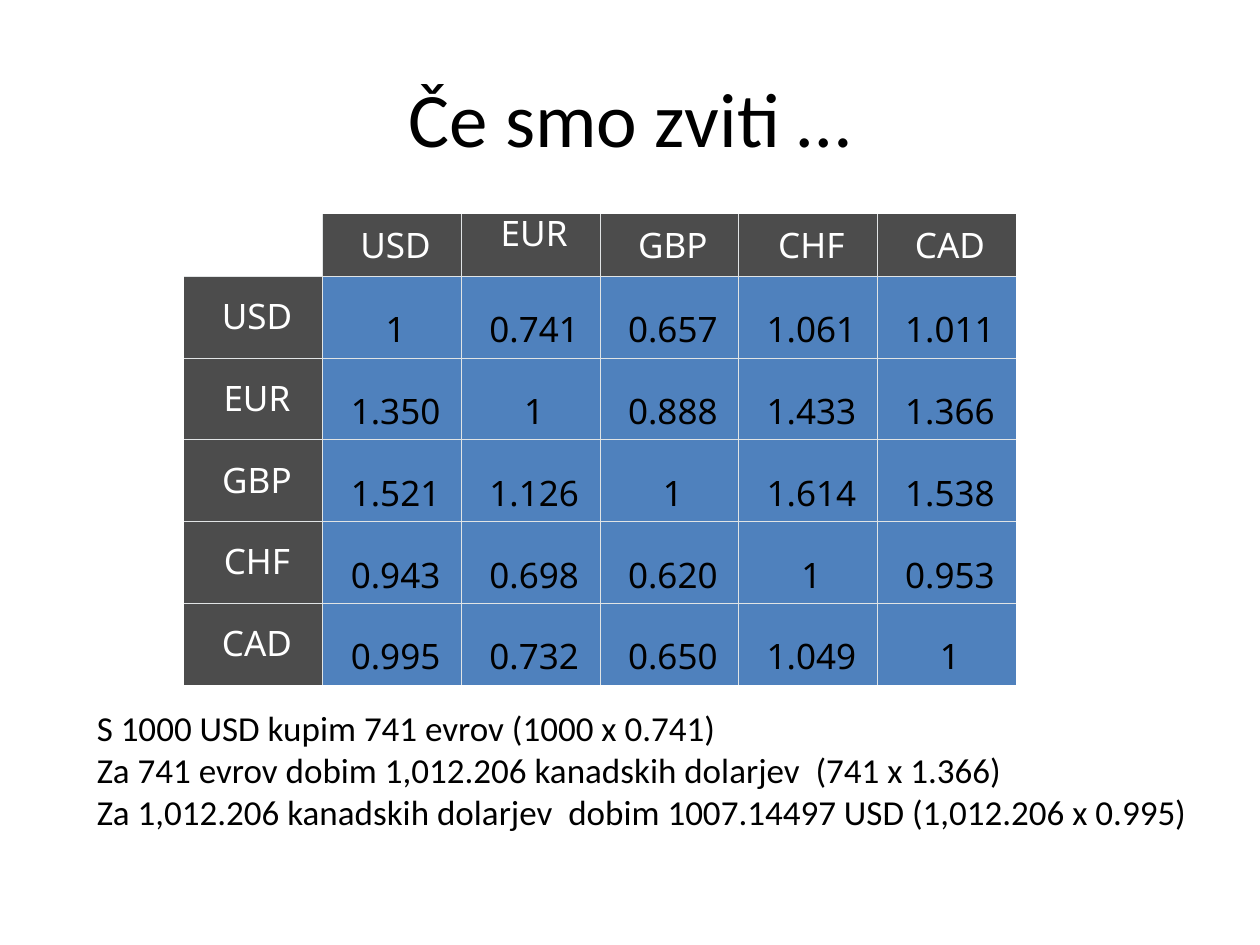
from dataclasses import dataclass

from lxml.etree import SubElement
from pptx import Presentation
from pptx.dml.color import RGBColor
from pptx.enum.text import MSO_ANCHOR, MSO_AUTO_SIZE, PP_ALIGN
from pptx.oxml.ns import qn
from pptx.util import Inches, Pt

CURRENCIES = ["USD", "EUR", "GBP", "CHF", "CAD"]
RATES = [
    ["1", "0.741", "0.657", "1.061", "1.011"],
    ["1.350", "1", "0.888", "1.433", "1.366"],
    ["1.521", "1.126", "1", "1.614", "1.538"],
    ["0.943", "0.698", "0.620", "1", "0.953"],
    ["0.995", "0.732", "0.650", "1.049", "1"],
]
STEPS = [
    "S 1000 USD kupim 741 evrov (1000 x 0.741)",
    "Za 741 evrov dobim 1,012.206 kanadskih dolarjev  (741 x 1.366)",
    "Za 1,012.206 kanadskih dolarjev  dobim 1007.14497 USD (1,012.206 x 0.995)",
]


@dataclass(frozen=True)
class Theme:
    text: str = "000000"
    header_text: str = "FFFFFF"
    header_fill: str = "4C4C4C"
    rate_fill: str = "4F81BD"
    rule: str = "E1E4E5"
    rule_width: float = 0.25
    body_font: str = "Calibri"
    table_font: str = "Noto Sans"
    title_size: int = 44
    body_size: int = 20


def units(count):
    """Length of a number of grid units; the slide is 100 columns by 75 rows."""
    return Inches(count / 10)


def write(para, text, *, font, size, color, align=None, spacing=None, indent=None):
    span = para.add_run()
    span.text = text
    span.font.name = font
    span.font.size = Pt(size)
    span.font.color.rgb = RGBColor.from_string(color)
    if align is not None:
        para.alignment = align
    if spacing is not None:
        para.line_spacing = spacing
    if indent is not None:
        properties = para._p.get_or_add_pPr()
        properties.set("marL", str(units(indent)))
        properties.set("indent", "0")


class SlideBuilder:
    def __init__(self, deck, theme):
        self.theme = theme
        self.page = deck.slides.add_slide(deck.slide_layouts[5])

    def title(self, text, column, row, columns, rows):
        box = self.page.shapes.title
        box.left, box.top = units(column), units(row)
        box.width, box.height = units(columns), units(rows)
        box.text_frame.vertical_anchor = MSO_ANCHOR.MIDDLE
        write(box.text_frame.paragraphs[0], text, font=self.theme.body_font,
              size=self.theme.title_size, color=self.theme.text, align=PP_ALIGN.CENTER)

    def text(self, lines, column, row, columns, rows):
        box = self.page.shapes.add_textbox(units(column), units(row), units(columns), units(rows))
        frame = box.text_frame
        frame.word_wrap = True
        frame.auto_size = MSO_AUTO_SIZE.SHAPE_TO_FIT_TEXT
        for index, line in enumerate(lines):
            para = frame.add_paragraph() if index else frame.paragraphs[0]
            write(para, line, font=self.theme.body_font, size=self.theme.body_size,
                  color=self.theme.text)

    def borders(self, cell, sides):
        """Rule the named sides of a cell and leave its other sides bare."""
        properties = cell._tc.get_or_add_tcPr()
        for position, side in enumerate("LRTB"):
            line = SubElement(properties, qn(f"a:ln{side}"), w=str(Pt(self.theme.rule_width)))
            properties.insert(position, line)
            if side in sides:
                fill = SubElement(line, qn("a:solidFill"))
                SubElement(fill, qn("a:srgbClr"), val=self.theme.rule)
            else:
                SubElement(line, qn("a:noFill"))

    def rate_table(self, names, rates, column, row, columns, rows, row_height):
        grid = [["", *names]] + [[name, *values] for name, values in zip(names, rates)]
        last = len(names)
        frame = self.page.shapes.add_table(len(grid), len(grid[0]), units(column), units(row),
                                           units(columns), units(rows))
        table = frame.table
        table.first_row = table.horz_banding = False
        for table_row in table.rows:
            table_row.height = units(row_height)
        frame.height = units(rows)

        for r, values in enumerate(grid):
            for c, value in enumerate(values):
                cell = table.cell(r, c)
                inner = {"L": c > 0, "R": c < last, "T": r > 0, "B": r < last}
                self.borders(cell, [side for side, ruled in inner.items() if ruled])
                if not value:
                    cell.fill.background()
                    continue
                self.table_cell(cell, value, header=r == 0 or c == 0,
                                spacing=self.line_spacing(r, c))

    @staticmethod
    def line_spacing(r, c):
        if r == 0:
            return Pt(13.5) if c == 2 else None
        return Pt(26) if c == 0 else 1.5

    def table_cell(self, cell, value, header, spacing):
        theme = self.theme
        cell.fill.solid()
        cell.fill.fore_color.rgb = RGBColor.from_string(
            theme.header_fill if header else theme.rate_fill)
        cell.vertical_anchor = MSO_ANCHOR.MIDDLE
        cell.margin_left = cell.margin_right = units(0.4)
        cell.margin_top = cell.margin_bottom = units(0.4)
        write(cell.text_frame.paragraphs[0], value, font=theme.table_font, size=theme.body_size,
              color=theme.header_text if header else theme.text,
              align=PP_ALIGN.CENTER, spacing=spacing, indent=0.6)


def main():
    deck = Presentation()
    deck.slide_width, deck.slide_height = units(100), units(75)
    slide = SlideBuilder(deck, Theme())
    slide.title("Če smo zviti …", 5, 3, 90, 12.5)
    slide.rate_table(CURRENCIES, RATES, 14.6, 17, 66, 33.8, row_height=4.9)
    slide.text(STEPS, 6.7, 55.6, 90.6, 11.1)
    deck.save("out.pptx")


if __name__ == "__main__":
    main()
